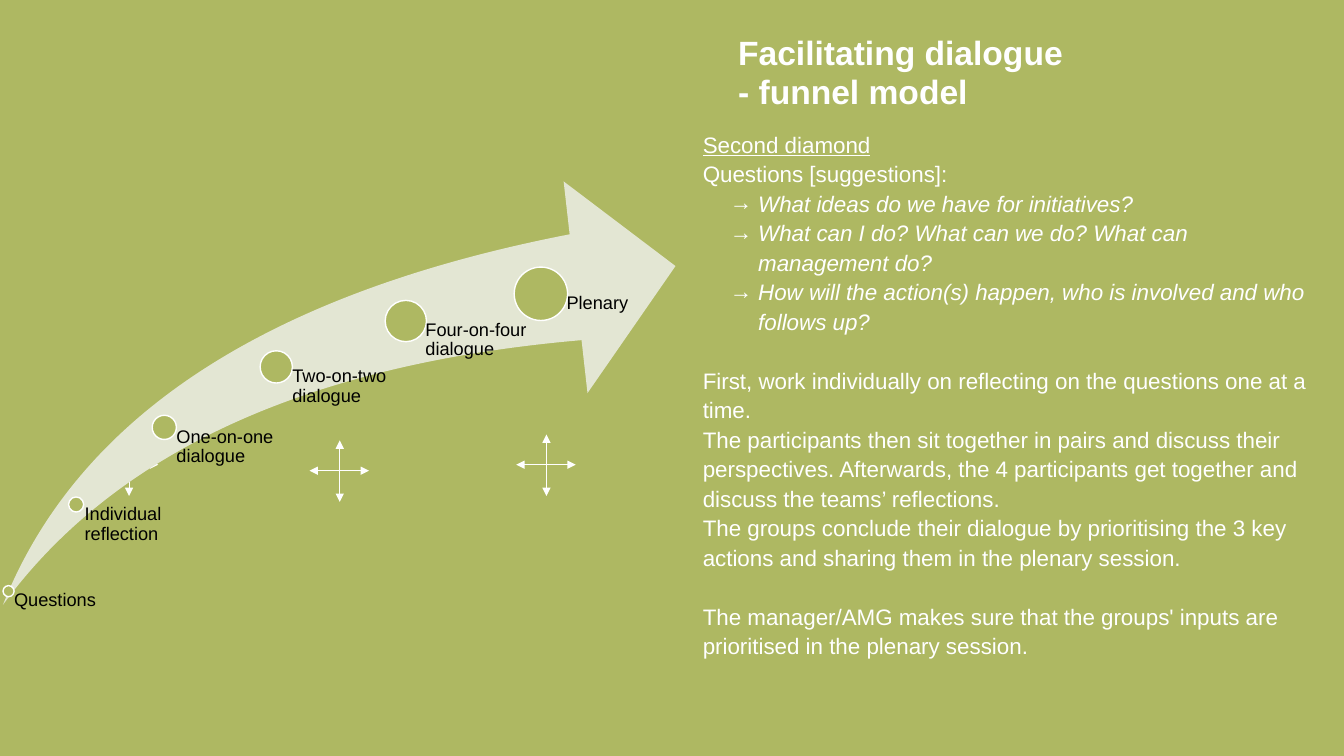
from dataclasses import dataclass

from lxml import etree
from pptx import Presentation
from pptx.dml.color import RGBColor
from pptx.enum.shapes import MSO_CONNECTOR, MSO_SHAPE
from pptx.oxml.ns import qn
from pptx.util import Emu, Pt

LINE = MSO_CONNECTOR.STRAIGHT
OVAL = MSO_SHAPE.OVAL
SWOOSH = MSO_SHAPE.SWOOSH_ARROW

OLIVE = RGBColor(0xAE, 0xB8, 0x62)
PALE = RGBColor(0xE3, 0xE6, 0xD3)
WHITE = RGBColor(0xFF, 0xFF, 0xFF)
BLACK = RGBColor(0x00, 0x00, 0x00)

FONT = "Arial"
FLOOR = 600  # lower edge of the funnel


def px(n: int) -> Emu:
    """Turn px (100 to the inch) into EMU."""
    return Emu(n * 9144)


@dataclass
class Para:
    text: str
    size: int = 16
    color: RGBColor = WHITE
    ratio: float = 1.1
    bold: bool = False
    under: bool = False
    bullet: bool = False
    before: int = 0


@dataclass
class Step:
    text: str
    left: int
    top: int
    size: int
    width: int  # width of the label


@dataclass
class Cross:
    left: int
    top: int


TITLE = Para("Facilitating dialogue\n- funnel model", 24, ratio=0.97, bold=True)
BODY = [
    Para("Second diamond", under=True),
    Para("Questions [suggestions]:"),
    Para("What ideas do we have for initiatives?", bullet=True),
    Para("What can I do? What can we do? What can management do?", bullet=True),
    Para("How will the action(s) happen, who is involved and who follows up?",
         bullet=True),
    Para("First, work individually on reflecting on the questions one at a time.",
         before=21),
    Para("The participants then sit together in pairs and discuss their "
         "perspectives. Afterwards, the 4 participants get together and "
         "discuss the teams’ reflections."),
    Para("The groups conclude their dialogue by prioritising the 3 key actions "
         "and sharing them in the plenary session."),
    Para("The manager/AMG makes sure that the groups' inputs are prioritised "
         "in the plenary session.", before=21),
]
CROSSES = [Cross(98, 431), Cross(307, 437), Cross(512, 431)]
STEPS = [
    Step("Individual reflection", 68, 493, 15, 87),
    Step("One-on-one dialogue", 151, 412, 24, 111),
    Step("Two-on-two dialogue", 258, 348, 32, 129),
    Step("Four-on-four dialogue", 382, 298, 41, 133),
    Step("Plenary", 510, 265, 53, 133),
]


def add_text(shapes, left: int, top: int, width: int, height: int,
             paras: list[Para], inset: int = 0) -> None:
    frame = shapes.add_textbox(px(left), px(top), px(width), px(height)).text_frame
    frame.word_wrap = True
    frame.margin_left = px(inset)
    frame.margin_top = frame.margin_right = frame.margin_bottom = 0
    for i, item in enumerate(paras):
        para = frame.add_paragraph() if i else frame.paragraphs[0]
        para.text = item.text
        para.line_spacing = item.ratio
        if item.before:
            para.space_before = Pt(item.before)
        if item.bullet:
            props = para._p.get_or_add_pPr()
            props.set("marL", str(px(55)))
            props.set("indent", str(-px(28)))
            etree.SubElement(props, qn("a:buFont")).set("typeface", FONT)
            etree.SubElement(props, qn("a:buChar")).set("char", "→")
        font = para.font
        font.name = FONT
        font.size = Pt(item.size)
        font.color.rgb = item.color
        font.bold = item.bold
        font.italic = item.bullet
        font.underline = item.under


def add_arrow(shapes, x1: int, y1: int, x2: int, y2: int) -> None:
    line = shapes.add_connector(LINE, px(x1), px(y1), px(x2), px(y2))
    line.line.color.rgb = WHITE
    line.line.width = Pt(0.5)
    stroke = line.line._get_or_add_ln()
    for end in ("a:headEnd", "a:tailEnd"):
        etree.SubElement(stroke, qn(end)).set("type", "triangle")
    etree.SubElement(line._element.spPr, qn("a:effectLst"))


def add_cross(shapes, cross: Cross) -> None:
    x, y = cross.left, cross.top
    add_arrow(shapes, x, y + 30, x + 59, y + 30)
    add_arrow(shapes, x + 30, y, x + 30, y + 61)


def add_dot(shapes, left: int, top: int, size: int) -> None:
    dot = shapes.add_shape(OVAL, px(left), px(top), px(size), px(size))
    dot.shadow.inherit = False
    dot.fill.solid()
    dot.fill.fore_color.rgb = OLIVE
    dot.line.color.rgb = WHITE
    dot.line.width = Pt(1)


def add_step(shapes, step: Step) -> None:
    half = round(step.size / 2)
    add_dot(shapes, step.left, step.top, step.size)
    top = step.top + half
    add_text(shapes, step.left + half, top, step.width, FLOOR - top,
             [Para(step.text, 13, BLACK, 0.9)], half)


def main() -> None:
    deck = Presentation()
    deck.slide_width, deck.slide_height = px(1333), px(750)
    slide = deck.slides.add_slide(deck.slide_layouts[6])
    slide.background.fill.solid()
    slide.background.fill.fore_color.rgb = OLIVE
    shapes = slide.shapes

    # Title and body
    add_text(shapes, 732, 34, 512, 82, [TITLE])
    add_text(shapes, 697, 127, 609, 574, BODY)

    # Crossed arrows behind the funnel
    for cross in CROSSES:
        add_cross(shapes, cross)

    # Funnel
    funnel = shapes.add_shape(SWOOSH, px(3), px(180), px(667), px(420))
    funnel.shadow.inherit = False
    funnel.adjustments[0] = funnel.adjustments[1] = 0.25
    funnel.fill.solid()
    funnel.fill.fore_color.rgb = PALE
    funnel.line.fill.background()

    # Steps along the funnel
    for step in STEPS:
        add_step(shapes, step)
    add_dot(shapes, 3, 581, 11)
    add_text(shapes, 14, 584, 100, 22, [Para("Questions", 13, BLACK, 1.0)])

    deck.save("out.pptx")


if __name__ == "__main__":
    main()
